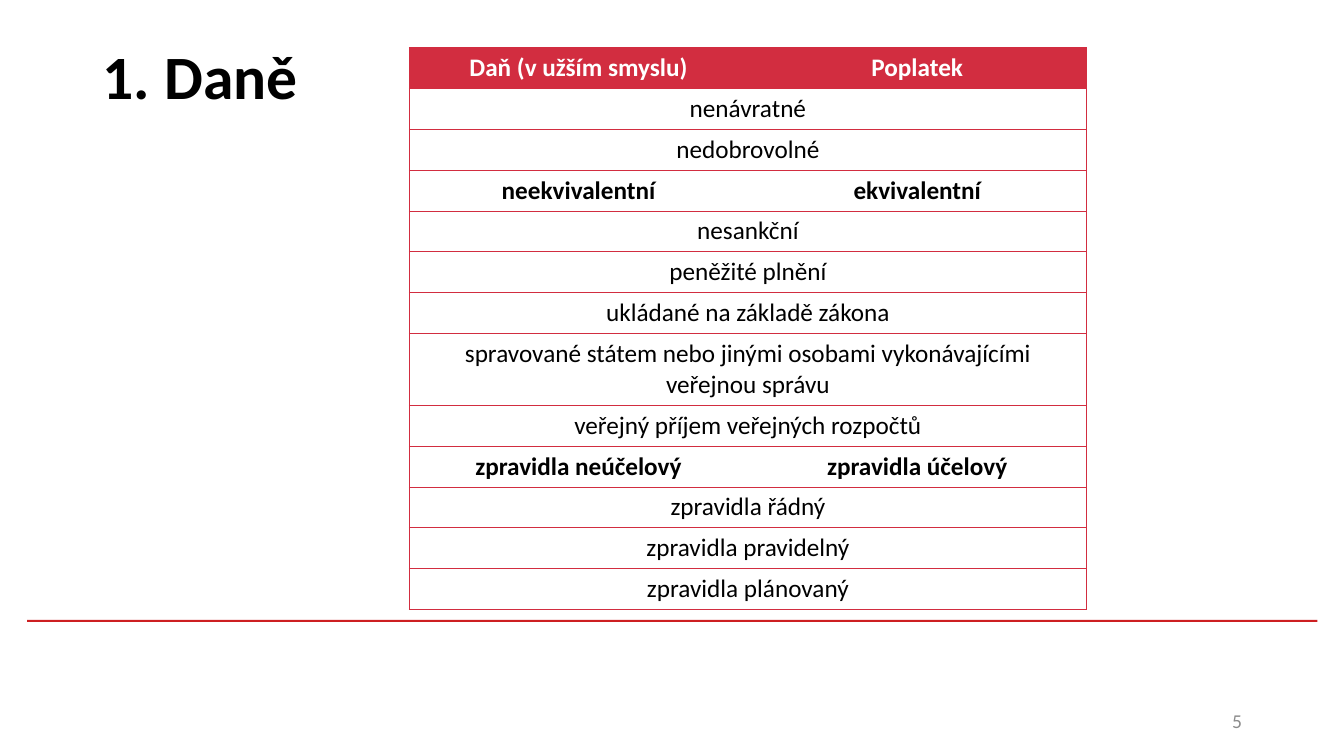
"""Build a slide comparing the features of a tax and a fee."""
from typing import NamedTuple

from lxml import etree
from pptx import Presentation
from pptx.dml.color import RGBColor
from pptx.enum.shapes import MSO_SHAPE
from pptx.enum.text import MSO_ANCHOR, PP_ALIGN
from pptx.oxml.ns import qn
from pptx.util import Inches, Length, Pt

RECTANGLE = MSO_SHAPE.RECTANGLE
MIDDLE = MSO_ANCHOR.MIDDLE
LEFT, CENTER, RIGHT = PP_ALIGN.LEFT, PP_ALIGN.CENTER, PP_ALIGN.RIGHT
COLORS = {"rule": "CD1F21", "table": "D22D40", "text": "000000",
          "header": "FFFFFF", "number": "8C8C8C"}
FONT = "Calibri"
GRID_COLUMNS, GRID_ROWS = 160, 90
SLIDE_WIDTH, SLIDE_HEIGHT = Inches(13.33), Inches(7.5)
ROW_HEIGHT, TALL_ROW_HEIGHT = 4.87, 8.4
BORDER_WIDTH = Pt(0.5)


class Area(NamedTuple):
    """A rectangle in grid columns and rows."""
    left: float
    top: float
    width: float
    height: float


class Style(NamedTuple):
    """The look of a paragraph."""
    size: float
    color: str
    bold: bool = False
    align: PP_ALIGN = LEFT


class Label(NamedTuple):
    """A single-line text box."""
    area: Area
    text: str
    style: Style


class Feature(NamedTuple):
    """A table row: one shared text or one text for each column."""
    texts: tuple[str, ...]
    height: float = ROW_HEIGHT


LABELS = (
    Label(Area(11.04, 0.24, 138, 17.4), "1. Daně", Style(44, "text", True)),
    Label(Area(113.04, 83.4, 36, 4.8), "5", Style(14, "number", align=RIGHT)),
)
RULE = Area(3.24, 73.8, 153.6, 0.24)
FEATURES = (
    Feature(("Daň (v užším smyslu)", "Poplatek")),
    Feature(("nenávratné",)),
    Feature(("nedobrovolné",)),
    Feature(("neekvivalentní", "ekvivalentní")),
    Feature(("nesankční",)),
    Feature(("peněžité plnění",)),
    Feature(("ukládané na základě zákona",)),
    Feature(("spravované státem nebo jinými osobami vykonávajícími "
             "veřejnou správu",), TALL_ROW_HEIGHT),
    Feature(("veřejný příjem veřejných rozpočtů",)),
    Feature(("zpravidla neúčelový", "zpravidla účelový")),
    Feature(("zpravidla řádný",)),
    Feature(("zpravidla pravidelný",)),
    Feature(("zpravidla plánovaný",)),
)
TABLE = Area(48.72, 5.64, 80.64, sum(feature.height for feature in FEATURES))


def across(columns: float) -> Length:
    """Turn grid columns into a length."""
    return Length(round(SLIDE_WIDTH * columns / GRID_COLUMNS))


def down(rows: float) -> Length:
    """Turn grid rows into a length."""
    return Length(round(SLIDE_HEIGHT * rows / GRID_ROWS))


def place(area: Area) -> tuple[Length, Length, Length, Length]:
    """Turn a grid area into slide lengths."""
    return across(area.left), down(area.top), across(area.width), down(area.height)


def color(name: str) -> RGBColor:
    """Look up a named colour."""
    return RGBColor.from_string(COLORS[name])


def write(paragraph, text: str, style: Style) -> None:
    """Put styled text in a paragraph."""
    paragraph.text = text
    paragraph.alignment = style.align
    paragraph.font.name = FONT
    paragraph.font.size = Pt(style.size)
    paragraph.font.bold = style.bold
    paragraph.font.color.rgb = color(style.color)


def add_label(page, label: Label) -> None:
    """Add a vertically centred text box."""
    box = page.shapes.add_textbox(*place(label.area))
    box.text_frame.word_wrap = True
    box.text_frame.vertical_anchor = MIDDLE
    write(box.text_frame.paragraphs[0], label.text, label.style)


def add_rule(page) -> None:
    """Add the thin red bar below the table."""
    rule = page.shapes.add_shape(RECTANGLE, *place(RULE))
    rule.shadow.inherit = False
    rule.fill.solid()
    rule.fill.fore_color.rgb = color("rule")
    rule.line.fill.background()


def set_borders(cell, visible_sides: str) -> None:
    """Draw the given sides of a cell and clear the others."""
    properties = cell._tc.get_or_add_tcPr()
    for side in "LRTB":
        line = etree.SubElement(properties, qn(f"a:ln{side}"), w=str(BORDER_WIDTH))
        if side in visible_sides:
            fill = etree.SubElement(line, qn("a:solidFill"))
            etree.SubElement(fill, qn("a:srgbClr"), val=COLORS["table"])
        else:
            etree.SubElement(line, qn("a:noFill"))


def add_features(page) -> None:
    """Add the comparison table."""
    table = page.shapes.add_table(len(FEATURES), 2, *place(TABLE)).table
    table.horz_banding = False
    for column in table.columns:
        column.width = across(TABLE.width / 2)
    for index, feature in enumerate(FEATURES):
        table.rows[index].height = down(feature.height)
        is_header, is_shared = index == 0, len(feature.texts) == 1
        for column, outer_side in enumerate("LR"):
            cell = table.cell(index, column)
            set_borders(cell, "LRTB" if is_shared else outer_side + "TB")
            if is_header:
                cell.fill.solid()
                cell.fill.fore_color.rgb = color("table")
            else:
                cell.fill.background()
        if is_shared:
            table.cell(index, 0).merge(table.cell(index, 1))
        style = Style(18, "header" if is_header else "text", not is_shared, CENTER)
        for column, text in enumerate(feature.texts):
            write(table.cell(index, column).text_frame.paragraphs[0], text, style)


def main() -> None:
    """Build and save the deck."""
    deck = Presentation()
    deck.slide_width, deck.slide_height = SLIDE_WIDTH, SLIDE_HEIGHT
    page = deck.slides.add_slide(deck.slide_layouts[6])
    add_rule(page)
    add_features(page)
    for label in LABELS:
        add_label(page, label)
    deck.save("out.pptx")


if __name__ == "__main__":
    main()
